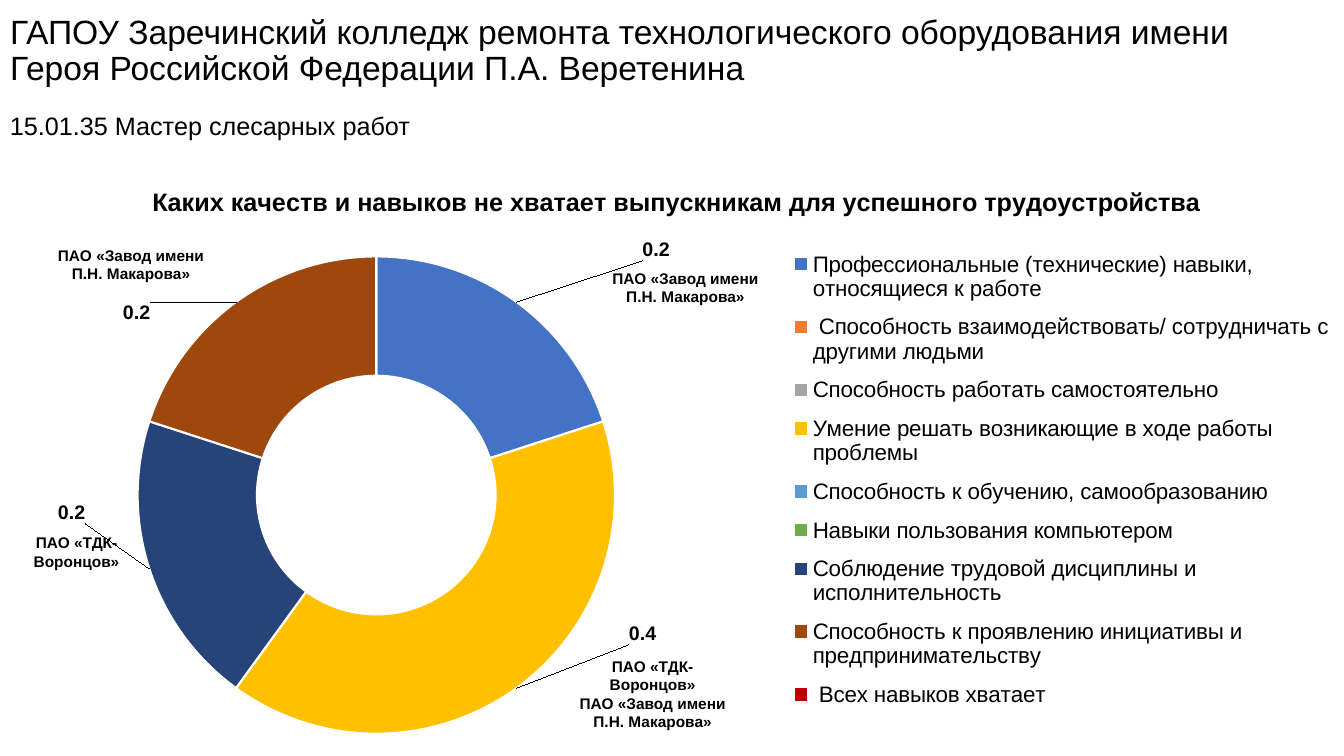
from pptx import Presentation
from pptx.chart.data import CategoryChartData
from pptx.dml.color import RGBColor
from pptx.enum.chart import XL_CHART_TYPE, XL_LEGEND_POSITION
from pptx.enum.text import MSO_ANCHOR, MSO_AUTO_SIZE, PP_ALIGN
from pptx.oxml import parse_xml
from pptx.oxml.ns import nsdecls, qn
from pptx.util import Pt

FONT = "Arial"
BLACK = "000000"
TITLE = ("ГАПОУ Заречинский колледж ремонта технологического оборудования имени "
         "Героя Российской Федерации П.А. Веретенина")
PROGRAMME = "15.01.35 Мастер слесарных работ"
CHART_TITLE = "Каких качеств и навыков не хватает выпускникам для успешного трудоустройства"
# skill, share, colour, label offset as a fraction of the chart
SKILLS = [
    ("Профессиональные (технические) навыки, относящиеся к работе", 0.2, "4472C4", (0.13, -0.16)),
    (" Способность взаимодействовать/ сотрудничать с другими людьми", 0, "ED7D31", None),
    ("Способность работать самостоятельно", 0, "A5A5A5", None),
    ("Умение решать возникающие в ходе работы проблемы", 0.4, "FFC000", (0.12, -0.01)),
    ("Способность к обучению, самообразованию", 0, "5B9BD5", None),
    ("Навыки пользования компьютером", 0, "70AD47", None),
    ("Соблюдение трудовой дисциплины и исполнительность", 0.2, "264478", (-0.1, -0.06)),
    ("Способность к проявлению инициативы и предпринимательству", 0.2, "9E480E", (-0.1, -0.06)),
    (" Всех навыков хватает", 0, "C00000", None),
]
ENGINE_PLANT = "ПАО «ТДК-Воронцов»"
MACHINE_PLANT = "ПАО «Завод имени П.Н. Макарова»"
# left, top, width, height, employers
EMPLOYERS = [
    (400.3, 465.8, 131.8, 60.5, [ENGINE_PLANT, MACHINE_PLANT]),
    (0, 377.3, 109.4, 33.8, [ENGINE_PLANT]),
    (33.1, 172.1, 121, 33.8, [MACHINE_PLANT]),
    (429.1, 188.6, 121, 33.8, [MACHINE_PLANT]),
]


def rgb(value):
    return RGBColor.from_string(value)


def style(font, size, bold=False):
    font.name, font.size, font.bold = FONT, Pt(size), bold
    font.color.rgb = rgb(BLACK)


def add_text(s, box, lines, size, bold=False, align=PP_ALIGN.LEFT):
    tf = s.shapes.add_textbox(*map(Pt, box)).text_frame
    tf.word_wrap = True
    tf.auto_size = MSO_AUTO_SIZE.SHAPE_TO_FIT_TEXT
    for i, line in enumerate(lines):
        p = tf.paragraphs[0] if i == 0 else tf.add_paragraph()
        p.alignment = align
        r = p.add_run()
        r.text = line
        style(r.font, size, bold)


def layout_xml(x, y, w=None, h=None, edge=True, inner=False):
    """Manual chart layout; without edge, x and y are offsets."""
    parts = '<c:layoutTarget val="inner"/>' if inner else ""
    if edge:
        parts += '<c:xMode val="edge"/><c:yMode val="edge"/>'
    for tag, value in zip("xywh", (x, y, w, h)):
        if value is not None:
            parts += f'<c:{tag} val="{value}"/>'
    return f'<c:layout {nsdecls("c")}><c:manualLayout>{parts}</c:manualLayout></c:layout>'


def set_layout(parent, after, xml):
    for old in parent.findall(qn("c:layout")):
        parent.remove(old)
    node = parse_xml(xml)
    if after is None:
        parent.insert(0, node)
    else:
        parent.find(qn(after)).addnext(node)


def add_skills_chart(s):
    data = CategoryChartData()
    data.categories = [skill[0] for skill in SKILLS]
    data.add_series("Series 1", [skill[1] for skill in SKILLS])
    chart = s.shapes.add_chart(XL_CHART_TYPE.DOUGHNUT, Pt(0), Pt(115.9),
                               Pt(960), Pt(448.6), data).chart
    chart.font.name, chart.font.size = "Calibri", Pt(10)
    chart.font.color.rgb = rgb(BLACK)

    chart.has_title = True
    r = chart.chart_title.text_frame.paragraphs[0].add_run()
    r.text = CHART_TITLE
    style(r.font, 18, True)
    set_layout(chart.chart_title._element, "c:tx", layout_xml(0.11, 0.03))

    chart.has_legend = True
    chart.legend.position = XL_LEGEND_POSITION.RIGHT
    chart.legend.include_in_layout = False
    style(chart.legend.font, 16)
    set_layout(chart.legend._element, "c:legendPos", layout_xml(0.59, 0.12, 0.4, 0.77))

    plot = chart.plots[0]
    plot.vary_by_categories = True
    plot_area = plot._element.getparent()
    set_layout(plot_area, None, layout_xml(0.1, 0.15, 0.36, 0.76, inner=True))
    plot._element.find(qn("c:holeSize")).set("val", "50")

    series = plot.series[0]
    labels = series.data_labels
    labels.show_value = True
    style(labels.font, 14, True)
    flags = "".join(f'<c:show{name} val="{int(name == "Val")}"/>' for name in
                    ("LegendKey", "Val", "CatName", "SerName", "Percent", "BubbleSize"))
    for i, (_, _, color, offset) in enumerate(SKILLS):
        point = series.points[i].format
        point.fill.solid()
        point.fill.fore_color.rgb = rgb(color)
        point.line.color.rgb = rgb("FFFFFF")
        point.line.width = Pt(1.5)
        body = layout_xml(*offset, edge=False) + flags if offset else '<c:delete val="1"/>'
        labels._element.insert(i, parse_xml(
            f'<c:dLbl {nsdecls("c")}><c:idx val="{i}"/>{body}</c:dLbl>'))
    labels._element.find(qn("c:showLeaderLines")).set("val", "1")


def main():
    prs = Presentation()
    prs.slide_width, prs.slide_height = Pt(960), Pt(540)
    s = prs.slides.add_slide(prs.slide_layouts[5])
    add_skills_chart(s)
    add_text(s, (0, 75.6, 489.6, 28.8), [PROGRAMME], 18)
    for *box, names in EMPLOYERS:
        add_text(s, box, names, 11, True, PP_ALIGN.CENTER)

    title = s.shapes.title
    title.left, title.top, title.width, title.height = Pt(0), Pt(1.4), Pt(929.5), Pt(70.6)
    tf = title.text_frame
    tf.vertical_anchor = MSO_ANCHOR.MIDDLE
    tf.auto_size = MSO_AUTO_SIZE.NONE
    p = tf.paragraphs[0]
    p.alignment = PP_ALIGN.LEFT
    p.line_spacing = 0.9
    r = p.add_run()
    r.text = TITLE
    style(r.font, 24)
    prs.save("out.pptx")


if __name__ == "__main__":
    main()
